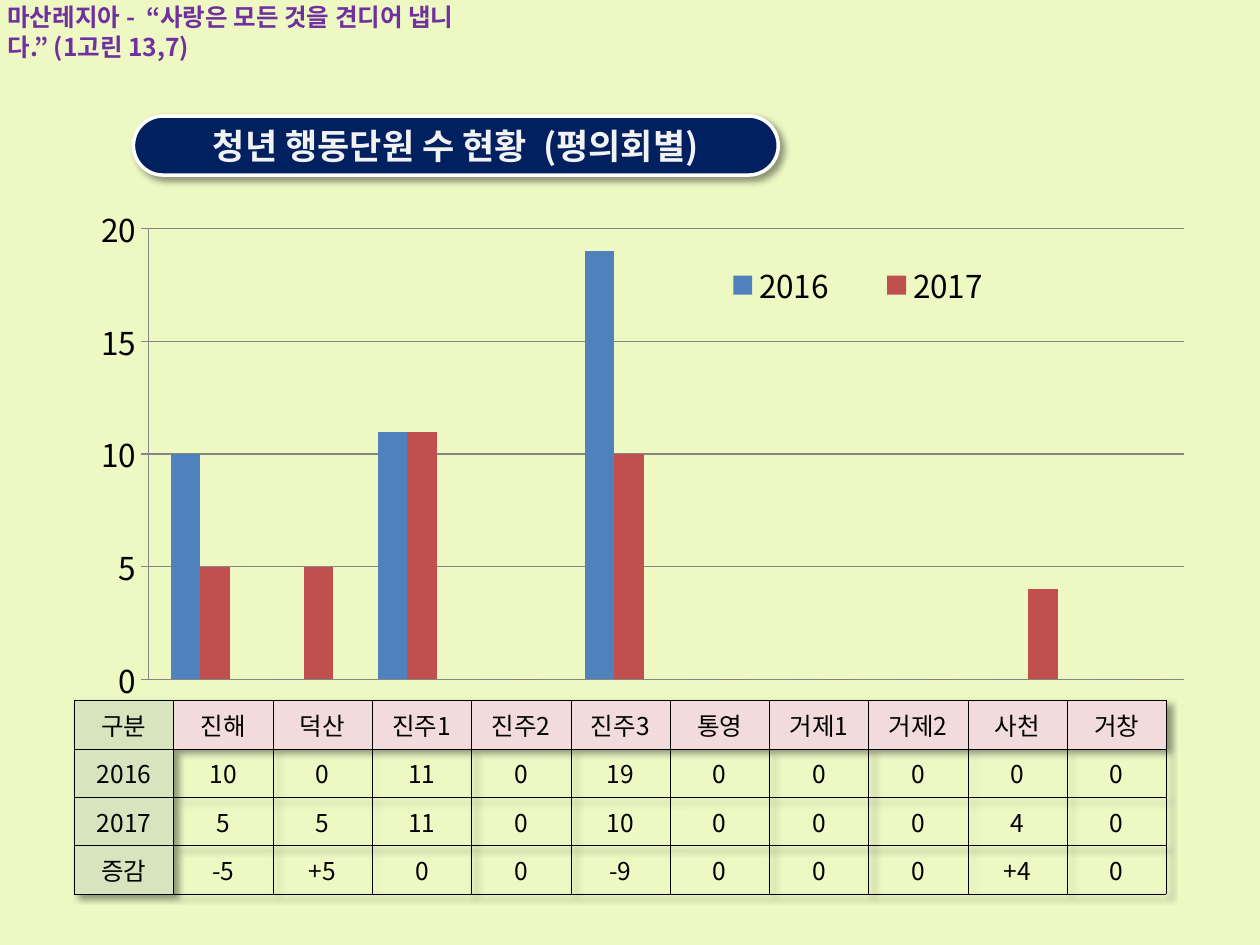
from pptx import Presentation
from pptx.chart.data import CategoryChartData
from pptx.dml.color import RGBColor
from pptx.enum.chart import XL_CHART_TYPE, XL_LEGEND_POSITION, XL_TICK_MARK
from pptx.enum.shapes import MSO_SHAPE
from pptx.enum.text import MSO_ANCHOR, PP_ALIGN
from pptx.oxml import parse_xml
from pptx.oxml.ns import nsdecls, qn
from pptx.util import Cm, Pt

CENTER = PP_ALIGN.CENTER
MIDDLE = MSO_ANCHOR.MIDDLE
ROUNDED = MSO_SHAPE.ROUNDED_RECTANGLE
COLUMN = XL_CHART_TYPE.COLUMN_CLUSTERED
LEGEND_RIGHT = XL_LEGEND_POSITION.RIGHT
TICK_OUTSIDE = XL_TICK_MARK.OUTSIDE

FONT = "Noto Sans CJK KR"
BLACK, GRID_GRAY = "000000", "868686"
COUNCILS = ["진해", "덕산", "진주1", "진주2", "진주3", "통영", "거제1", "거제2", "사천", "거창"]
COUNTS = {
    "2016": [10, 0, 11, 0, 19, 0, 0, 0, 0, 0],
    "2017": [5, 5, 11, 0, 10, 0, 0, 0, 4, 0],
}
SERIES_COLORS = ["4F81BD", "C0504D"]


def color(value):
    return RGBColor.from_string(value)


def paint(fill, value):
    fill.solid()
    fill.fore_color.rgb = color(value)


def set_font(font, size, value, bold=False):
    font.size = Pt(size)
    font.bold = bold
    font.name = FONT
    font.color.rgb = color(value)
    font._element.append(parse_xml(f'<a:ea {nsdecls("a")} typeface="{FONT}"/>'))


def shadow_effect():
    return parse_xml(
        f'<a:effectLst {nsdecls("a")}><a:outerShdw blurRad="{Pt(4)}" dist="{Pt(3)}" '
        'dir="2700000" algn="tl" rotWithShape="0"><a:srgbClr val="000000">'
        '<a:alpha val="40000"/></a:srgbClr></a:outerShdw></a:effectLst>'
    )


def manual_layout(x, y, width, height, target=""):
    return parse_xml(
        f'<c:layout {nsdecls("c")}><c:manualLayout>{target}'
        '<c:xMode val="edge"/><c:yMode val="edge"/>'
        f'<c:x val="{x}"/><c:y val="{y}"/><c:w val="{width}"/><c:h val="{height}"/>'
        '</c:manualLayout></c:layout>'
    )


def replace_layout(parent, successor, layout):
    for old_layout in parent.findall(qn("c:layout")):
        parent.remove(old_layout)
    successor.addprevious(layout)


def style_cell(cell, text, fill_color):
    cell.vertical_anchor = MIDDLE
    cell.margin_left = cell.margin_right = Cm(0.1)
    cell.text = text
    paragraph = cell.text_frame.paragraphs[0]
    paragraph.alignment = CENTER
    set_font(paragraph.font, 14, BLACK)
    if fill_color:
        paint(cell.fill, fill_color)
    else:
        cell.fill.background()
    properties = cell._tc.get_or_add_tcPr()
    for index, side in enumerate("LRTB"):
        properties.insert(index, parse_xml(
            f'<a:ln{side} {nsdecls("a")} w="{Pt(0.25)}"><a:solidFill>'
            f'<a:srgbClr val="{BLACK}"/></a:solidFill></a:ln{side}>'
        ))


def add_count_table(slide, left, top, width, height):
    changes = [after - before for before, after in zip(*COUNTS.values())]
    rows = [["구분", *COUNCILS]]
    rows += [[year, *map(str, counts)] for year, counts in COUNTS.items()]
    rows.append(["증감", *(f"{change:+d}" if change else "0" for change in changes)])
    frame = slide.shapes.add_table(len(rows), len(rows[0]), left, top, width, height)
    table = frame.table
    table.horz_banding = False
    table._tbl.tblPr.insert(0, shadow_effect())
    for row_index, row in enumerate(rows):
        for column_index, text in enumerate(row):
            if column_index == 0:
                fill_color = "D7E4BD"
            else:
                fill_color = None if row_index else "F2DCDB"
            style_cell(table.cell(row_index, column_index), text, fill_color)


def add_count_chart(slide, left, top, width, height):
    chart_data = CategoryChartData()
    chart_data.categories = [str(number + 1) for number in range(len(COUNCILS))]
    for year, counts in COUNTS.items():
        chart_data.add_series(year, counts)
    chart = slide.shapes.add_chart(COLUMN, left, top, width, height, chart_data).chart
    chart.has_title = False
    set_font(chart.font, 18, BLACK)

    plot = chart.plots[0]
    plot.gap_width = 150
    plot.overlap = 0
    plot.vary_by_categories = False
    for series, series_color in zip(plot.series, SERIES_COLORS):
        paint(series.format.fill, series_color)

    chart.category_axis.visible = False
    axis = chart.value_axis
    axis.minimum_scale, axis.maximum_scale, axis.major_unit = 0, 20, 5
    axis.major_tick_mark = TICK_OUTSIDE
    axis.has_major_gridlines = True
    for line in (axis.format.line, axis.major_gridlines.format.line):
        line.color.rgb = color(GRID_GRAY)
        line.width = Pt(0.75)

    chart.has_legend = True
    legend = chart.legend
    legend.position = LEGEND_RIGHT
    legend.include_in_layout = False
    legend_element = legend._element
    replace_layout(legend_element, legend_element.find(qn("c:overlay")),
                   manual_layout(0.54, 0.12, 0.3, 0.09))
    plot_area = chart._chartSpace.chart.plotArea
    replace_layout(plot_area, plot_area.find(qn("c:barChart")),
                   manual_layout(0.073, 0.064, 0.9, 0.808, '<c:layoutTarget val="inner"/>'))


def add_motto(slide, left, top, width, height):
    text_frame = slide.shapes.add_textbox(left, top, width, height).text_frame
    text_frame.word_wrap = True
    paragraph = text_frame.paragraphs[0]
    paragraph.text = "마산레지아 -  “사랑은 모든 것을 견디어 냅니다.” (1고린 13,7)"
    set_font(paragraph.font, 14, "7030A0", bold=True)


def add_title_pill(slide, left, top, width, height):
    shape = slide.shapes.add_shape(ROUNDED, left, top, width, height)
    shape.adjustments[0] = 0.5
    paint(shape.fill, "002060")
    shape.line.color.rgb = color("FFFFFF")
    shape.line.width = Pt(2)
    shape._element.spPr.append(shadow_effect())
    text_frame = shape.text_frame
    text_frame.vertical_anchor = MIDDLE
    text_frame.word_wrap = True
    paragraph = text_frame.paragraphs[0]
    paragraph.text = "청년 행동단원 수 현황  (평의회별)"
    paragraph.alignment = CENTER
    set_font(paragraph.font, 20, "F2F2F2", bold=True)


def main():
    presentation = Presentation()
    presentation.slide_width, presentation.slide_height = Cm(25.4), Cm(19.05)
    slide = presentation.slides.add_slide(presentation.slide_layouts[6])
    paint(slide.background.fill, "EDF8C3")
    add_count_table(slide, Cm(1.5), Cm(14.12), Cm(22.02), Cm(3.8))
    add_count_chart(slide, Cm(1.3), Cm(3.89), Cm(23.19), Cm(11.25))
    add_motto(slide, Cm(-0.1), Cm(-0.08), Cm(9.98), Cm(0.86))
    add_title_pill(slide, Cm(2.69), Cm(2.34), Cm(13), Cm(1.19))
    presentation.save("out.pptx")


if __name__ == "__main__":
    main()
